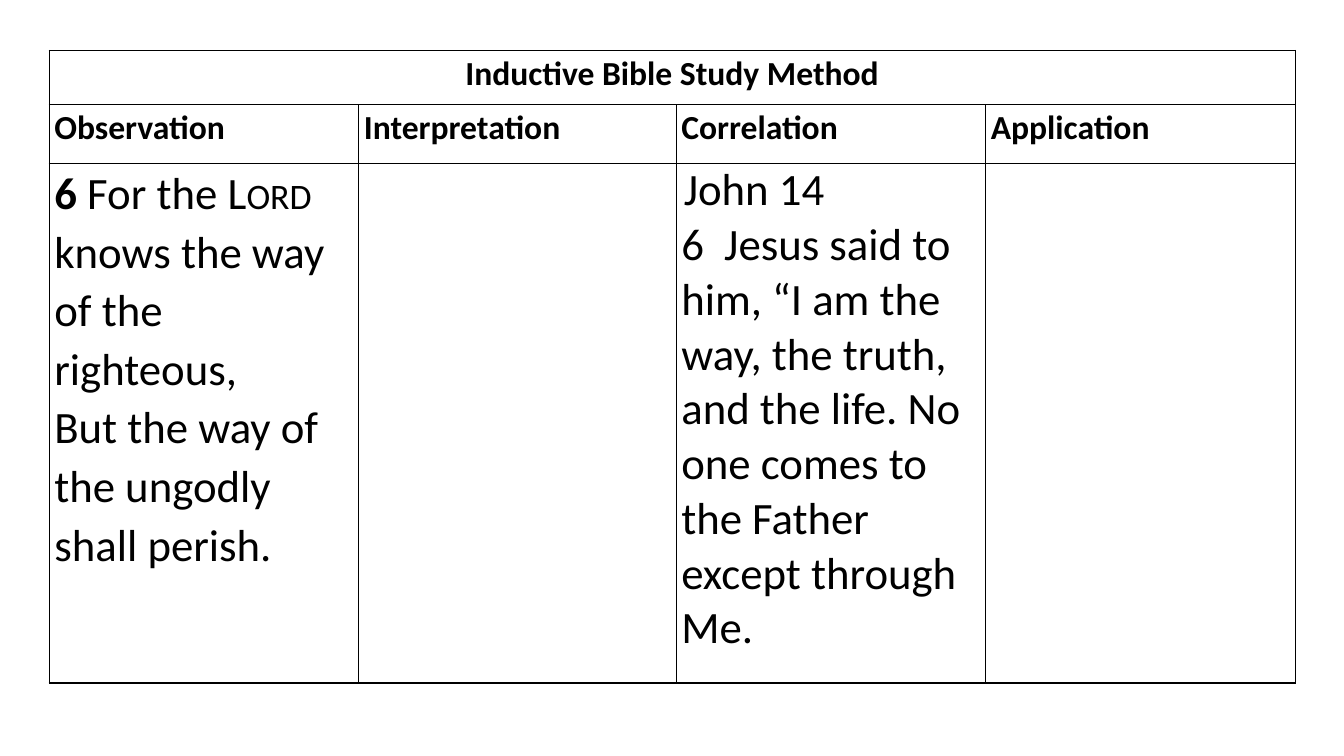
import lxml.etree
import pptx
import pptx.dml.color
import pptx.enum.text
import pptx.oxml.ns
import pptx.util

Cm = pptx.util.Cm
Pt = pptx.util.Pt
BLACK = pptx.dml.color.RGBColor(0x00, 0x00, 0x00)
WHITE = pptx.dml.color.RGBColor(0xFF, 0xFF, 0xFF)

COLUMN_SHARES = (7.8, 8.0, 7.8, 7.8)
ROW_SHARES = (1.37, 1.47, 13.1)
BORDER_WIDTH = Pt(1)
STUDY_SPACING = 1.07

HEADING = {"name": "Calibri", "size": Pt(24), "bold": True}
VERSE = {"name": "Calibri", "size": Pt(32), "bold": False}
VERSE_NUMBER = {**VERSE, "bold": True}
SMALL_GAP = {**VERSE, "size": Pt(8)}

TITLE = "Inductive Bible Study Method"
STEPS = ("Observation", "Interpretation", "Correlation", "Application")

# Each paragraph is a list of (text, format, small capitals) runs
OBSERVATION = [
    [("6 ", VERSE_NUMBER, False), ("For the ", VERSE, False), ("Lord ", VERSE, True)],
    [("knows the way of the righteous,\nBut the way of the ungodly shall perish.", VERSE, False)],
]
CORRELATION = [
    [(" ", SMALL_GAP, False), ("John 14", VERSE, False)],
    [("6  Jesus said to him, “I am the way, the truth, and the life. "
      "No one comes to the Father", VERSE, False)],
    [("except through Me.", VERSE, False)],
]


def add_run(paragraph, text, font_format, small_capitals):
    for index, line in enumerate(text.split("\n")):
        if index:
            paragraph.add_line_break()
        run = paragraph.add_run()
        run.text = line
        for name, value in font_format.items():
            setattr(run.font, name, value)
        run.font.color.rgb = BLACK
        if small_capitals:
            run.font._element.set("cap", "small")


def write_cell(cell, paragraphs, line_spacing, alignment=pptx.enum.text.PP_ALIGN.LEFT):
    for index, runs in enumerate(paragraphs):
        paragraph = cell.text_frame.add_paragraph() if index else cell.text_frame.paragraphs[0]
        paragraph_format = {"alignment": alignment, "line_spacing": line_spacing,
                            "space_before": Pt(0), "space_after": Pt(0)}
        for name, value in paragraph_format.items():
            setattr(paragraph, name, value)
        for run in runs:
            add_run(paragraph, *run)


def style_cell(cell):
    cell_format = {"margin_left": Cm(0.13), "margin_right": Cm(0.13), "margin_top": 0,
                   "margin_bottom": 0, "vertical_anchor": pptx.enum.text.MSO_ANCHOR.TOP}
    for name, value in cell_format.items():
        setattr(cell, name, value)
    cell.fill.solid()
    cell.fill.fore_color.rgb = WHITE

    # Borders come before the fill in the cell properties
    qualified = pptx.oxml.ns.qn
    properties = cell._tc.get_or_add_tcPr()
    for index, side in enumerate(("a:lnL", "a:lnR", "a:lnT", "a:lnB")):
        border = lxml.etree.Element(qualified(side), w=str(BORDER_WIDTH))
        fill = lxml.etree.SubElement(border, qualified("a:solidFill"))
        lxml.etree.SubElement(fill, qualified("a:srgbClr"), val=str(BLACK))
        properties.insert(index, border)


def add_study_table(slide, left, top, width, height):
    frame = slide.shapes.add_table(len(ROW_SHARES), len(COLUMN_SHARES), left, top, width, height)
    table = frame.table
    table.first_row = False
    table.horz_banding = False
    for column, share in zip(table.columns, COLUMN_SHARES):
        column.width = int(width * share / sum(COLUMN_SHARES))
    for row, share in zip(table.rows, ROW_SHARES):
        row.height = int(height * share / sum(ROW_SHARES))
    for cell in table.iter_cells():
        style_cell(cell)

    # Title row across all columns
    table.cell(0, 0).merge(table.cell(0, len(STEPS) - 1))
    write_cell(table.cell(0, 0), [[(TITLE, HEADING, False)]], STUDY_SPACING,
               pptx.enum.text.PP_ALIGN.CENTER)

    # Study steps
    for index, step in enumerate(STEPS):
        write_cell(table.cell(1, index), [[(step, HEADING, False)]], STUDY_SPACING)

    # Verses
    write_cell(table.cell(2, STEPS.index("Observation")), OBSERVATION, STUDY_SPACING)
    write_cell(table.cell(2, STEPS.index("Correlation")), CORRELATION, 1.0)


def main():
    presentation = pptx.Presentation()
    presentation.slide_width = Cm(33.87)
    presentation.slide_height = Cm(19.05)
    slide = presentation.slides.add_slide(presentation.slide_layouts[6])
    add_study_table(slide, Cm(1.24), Cm(1.27), Cm(31.4), Cm(15.94))
    presentation.save("out.pptx")


if __name__ == "__main__":
    main()
